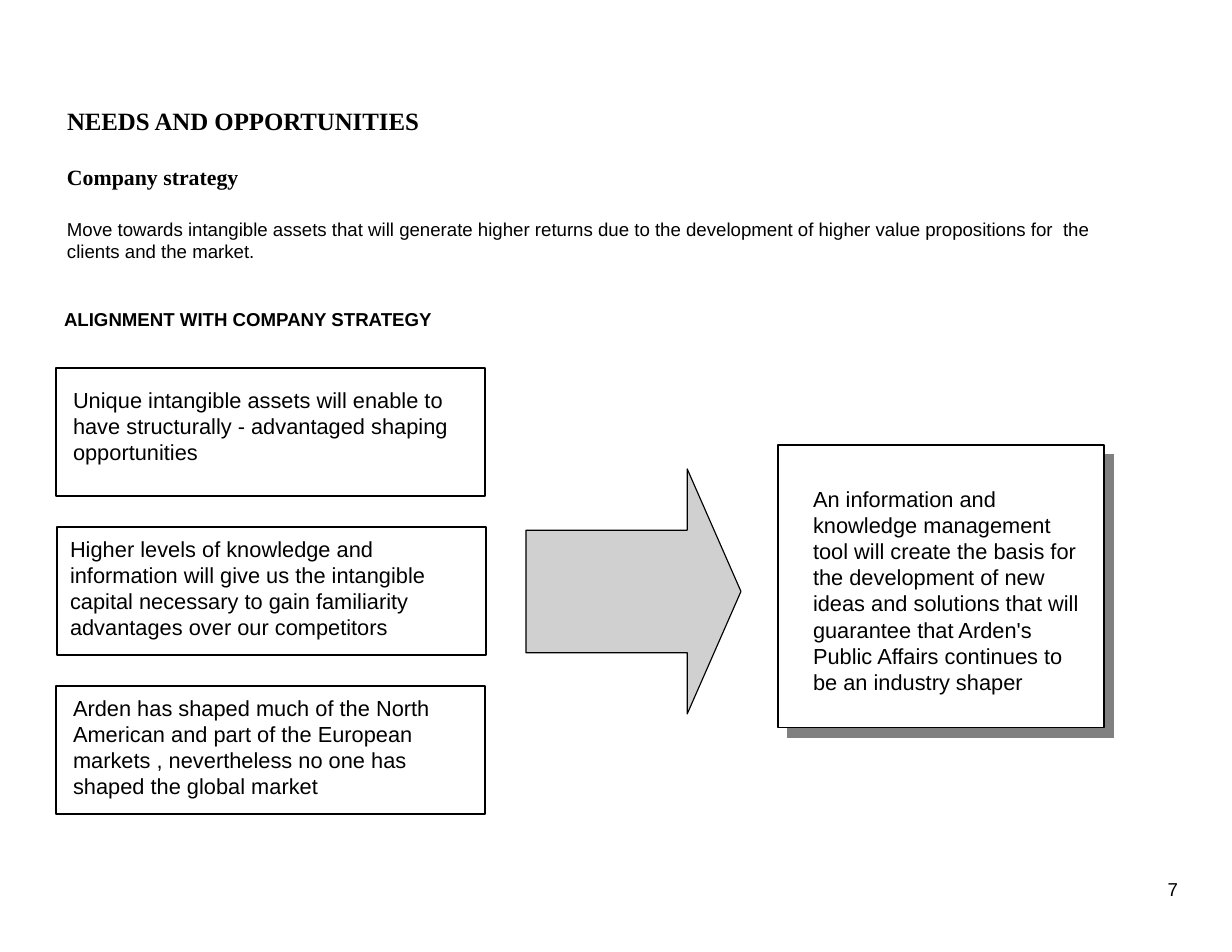
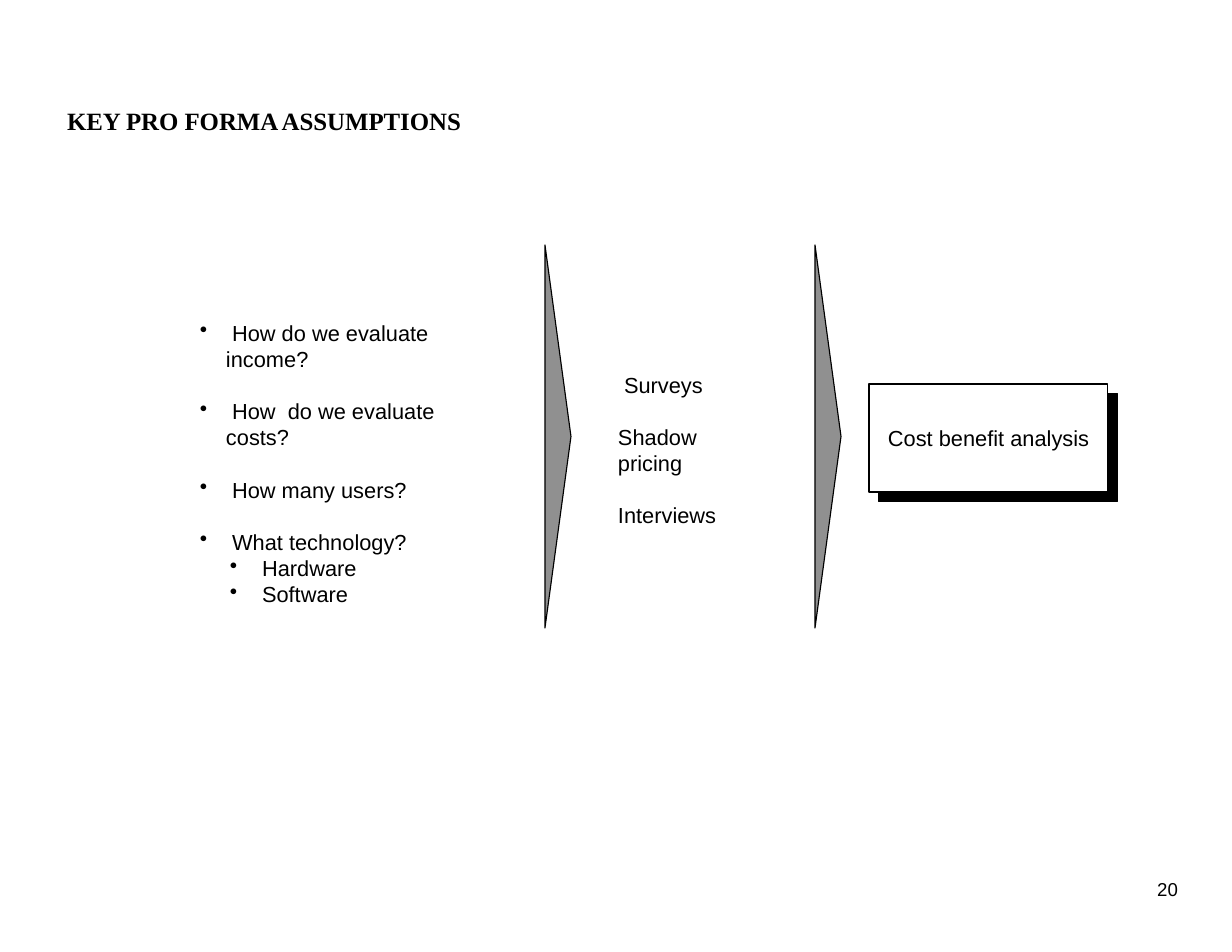
from lxml.etree import SubElement
from pptx import Presentation
from pptx.dml.color import RGBColor
from pptx.enum.shapes import MSO_SHAPE as Shape
from pptx.enum.text import MSO_AUTO_SIZE as Fit, PP_ALIGN as Align
from pptx.oxml.ns import qn
from pptx.util import Pt

PX = 914400 / 112
SANS, SERIF = "Arial", "Times New Roman"
BLACK = RGBColor(0x00, 0x00, 0x00)
WHITE = RGBColor(0xFF, 0xFF, 0xFF)
PALE = RGBColor(0xD0, 0xD0, 0xD0)
MID = RGBColor(0x90, 0x90, 0x90)
DARK = RGBColor(0x80, 0x80, 0x80)
GAP = 16.8  # one line of 14 pt text

NEEDS = [  # box left, text left, text drop, words
    (56, 62, 13, "Unique intangible assets will enable to have structurally - "
     "advantaged shaping opportunities"),
    (57, 59, 3, "Higher levels of knowledge and information will give us the "
     "intangible capital necessary to gain familiarity advantages over our "
     "competitors"),
    (56, 62, 3, "Arden has shaped much of the North American and part of the "
     "European markets , nevertheless no one has shaped the global market"),
]
GOAL = ("An information and knowledge management tool will create the basis "
        "for the development of new  ideas and solutions that will guarantee "
        "that Arden's Public Affairs continues to be an industry shaper")
MOVE = ("Move towards intangible assets that will generate higher returns due "
        "to the development of higher value propositions for  the clients and "
        "the market.")
ASKS = [  # level, words
    (0, " How do we evaluate income?"),
    (0, " How  do we evaluate costs?"),
    (0, " How many users?"),
    (0, " What technology?"),
    (1, " Hardware"),
    (1, " Software"),
]
MEANS = [" Surveys", "Shadow pricing", "Interviews"]


def emu(*sizes):
    return [round(size * PX) for size in sizes]


def add_form(slide, kind, area, fill=WHITE):
    form = slide.shapes.add_shape(kind, *emu(*area))
    form.shadow.inherit = False
    form.fill.solid()
    form.fill.fore_color.rgb = fill
    form.line.color.rgb = BLACK
    form.line.width = Pt(0.75)
    return form


def add_shade(form, color):
    """Cast a hard shadow down and to the right."""
    effects = form._element.spPr.find(qn("a:effectLst"))
    shade = SubElement(effects, qn("a:outerShdw"), blurRad="0", dist="107950",
                       dir="2700000", algn="ctr", rotWithShape="0")
    SubElement(shade, qn("a:srgbClr"), val=str(color))


def add_text(slide, area, lines, size=14, face=SANS, bold=False, wrap=True,
             inset=True, align=Align.LEFT):
    box = slide.shapes.add_textbox(*emu(*area))
    frame = box.text_frame
    frame.word_wrap = wrap
    frame.auto_size = Fit.SHAPE_TO_FIT_TEXT if inset else Fit.NONE
    if not inset:
        frame.margin_left = frame.margin_right = 0
        frame.margin_top = frame.margin_bottom = 0
    for i, line in enumerate(lines):
        para = frame.paragraphs[0] if i == 0 else frame.add_paragraph()
        para.text = line
        para.alignment = align
        if i:
            para.space_before = Pt(GAP)
        font = para.font
        font.name, font.size, font.bold = face, Pt(size), bold
        font.color.rgb = BLACK
    return frame


def add_dot(para, level):
    """Give a paragraph a hanging bullet."""
    props = para._p.get_or_add_pPr()
    hang, = emu(26)
    left, = emu(26 + 30 * level)
    props.set("marL", str(left))
    props.set("indent", str(-hang))
    mark = SubElement(props, qn("a:buChar"), char="•")
    ink = props.find(qn("a:defRPr"))
    if ink is not None:
        ink.addprevious(mark)


def add_list(slide, area, items):
    frame = add_text(slide, area, [words for _, words in items])
    for para, (level, _) in zip(frame.paragraphs, items):
        if level:
            para.level = level
            para.space_before = Pt(0)
        add_dot(para, level)


def add_wedge(slide, left, top, wide, high):
    """Draw a triangle that points right."""
    area = (left + (wide - high) / 2, top + (high - wide) / 2, high, wide)
    form = add_form(slide, Shape.ISOSCELES_TRIANGLE, area, MID)
    form.rotation = 90


def add_page(deck, title, wide, number):
    slide = deck.slides.add_slide(deck.slide_layouts[6])
    add_text(slide, (56, 100, wide, 41), [title], 16, SERIF, True, wrap=False)
    add_text(slide, (922, 878, 256, 22), [str(number)], 12, inset=False,
             align=Align.RIGHT)
    return slide


def add_needs(deck):
    slide = add_page(deck, "NEEDS AND OPPORTUNITIES", 376, 7)
    add_text(slide, (56, 158, 194, 38), ["Company strategy"], 14, SERIF, True,
             wrap=False)
    add_text(slide, (56, 212, 1081, 56), [MOVE], 12)
    add_text(slide, (53, 302, 393, 34), ["ALIGNMENT WITH COMPANY STRATEGY"],
             12, bold=True, wrap=False)
    for i, (left, start, drop, words) in enumerate(NEEDS):
        top = 368 + 159 * i
        add_form(slide, Shape.RECTANGLE, (left, top, 429, 128))
        add_text(slide, (start, top + drop, 420, 116), [words])
    arrow = add_form(slide, Shape.RIGHT_ARROW, (526, 469, 215, 245), PALE)
    arrow.adjustments[0], arrow.adjustments[1] = 0.5, 0.25
    goal = add_form(slide, Shape.RECTANGLE, (778, 445, 326, 283))
    add_shade(goal, DARK)
    add_text(slide, (802, 480, 293, 221), [GOAL])


def add_plan(deck):
    slide = add_page(deck, "KEY PRO FORMA ASSUMPTIONS", 420, 20)
    add_list(slide, (189, 314, 321, 246), ASKS)
    for left in (545, 815):
        add_wedge(slide, left, 245, 26, 383)
    add_text(slide, (607, 366, 171, 142), MEANS, wrap=False)
    result = add_form(slide, Shape.RECTANGLE, (869, 384, 239, 108))
    add_shade(result, BLACK)
    add_text(slide, (877, 419, 224, 38), ["Cost benefit analysis"], wrap=False)


def main():
    deck = Presentation()
    deck.slide_width, deck.slide_height = emu(1232, 952)
    add_needs(deck)
    add_plan(deck)
    deck.save("out.pptx")


if __name__ == "__main__":
    main()
